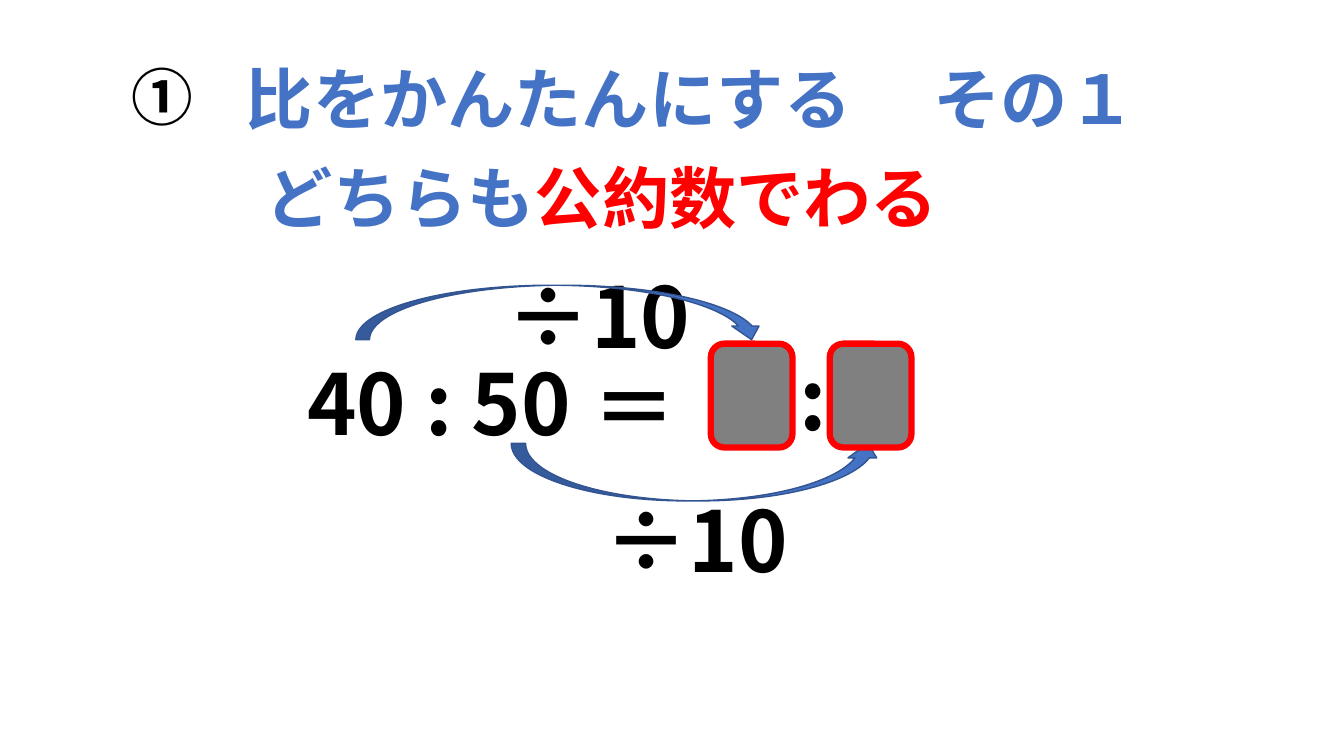
from lxml import etree
from pptx import Presentation
from pptx import util as u
from pptx.dml.color import RGBColor
from pptx.enum import shapes, text
from pptx.oxml.ns import qn

BLACK = RGBColor(0x00, 0x00, 0x00)
BLUE = RGBColor(0x44, 0x72, 0xC4)
DARK_BLUE = RGBColor(0x32, 0x54, 0x91)
RED = RGBColor(0xFF, 0x00, 0x00)
GRAY = RGBColor(0x80, 0x80, 0x80)


class RatioSlide:
    font_name = "Noto Sans CJK JP"

    def __init__(self, presentation):
        self.slide = presentation.slides.add_slide(presentation.slide_layouts[6])

    def label(self, left, top, width, height, size, *runs):
        """Add one line of bold text; runs are (words, colour) pairs."""
        shape = self.slide.shapes.add_textbox(
            u.Inches(left), u.Inches(top), u.Inches(width), u.Inches(height))
        frame = shape.text_frame
        frame.word_wrap = True
        frame.auto_size = text.MSO_AUTO_SIZE.SHAPE_TO_FIT_TEXT
        paragraph = frame.paragraphs[0]
        font = paragraph.font
        font.size, font.bold, font.name = u.Pt(size), True, self.font_name
        # East Asian characters need their own typeface entry
        latin = paragraph._p.pPr.find(".//" + qn("a:latin"))
        east_asian = etree.Element(qn("a:ea"), typeface=self.font_name)
        latin.addnext(east_asian)
        if len(runs) == 1:
            font.color.rgb = runs[0][1]
        for words, color in runs:
            run = paragraph.add_run()
            run.text = words
            if len(runs) > 1:
                run.font.color.rgb = color

    def figure(self, kind, left, top, width, height, fill, line, weight):
        shape = self.slide.shapes.add_shape(
            kind, u.Inches(left), u.Inches(top), u.Inches(width), u.Inches(height))
        shape.shadow.inherit = False
        shape.fill.solid()
        shape.fill.fore_color.rgb = fill
        shape.line.color.rgb = line
        shape.line.width = u.Pt(weight)
        return shape

    def curved_arrow(self, left, top, width, height, below=False):
        shape = self.figure(shapes.MSO_SHAPE.CURVED_DOWN_ARROW,
                            left, top, width, height, BLUE, DARK_BLUE, 1)
        if below:
            shape._element.spPr.xfrm.set("flipV", "1")

    def answer_box(self, left):
        self.figure(shapes.MSO_SHAPE.ROUNDED_RECTANGLE,
                    left, 3.41, 0.81, 1.03, GRAY, RED, 4.5)


def main():
    presentation = Presentation()
    presentation.slide_width = u.Inches(13.33)
    presentation.slide_height = u.Inches(7.5)
    ratio = RatioSlide(presentation)

    # Left side of the equation and the upper division
    ratio.label(2.95, 3.44, 3.06, 1.11, 60, ("40 : 50", BLACK))
    ratio.label(4.93, 2.57, 3.21, 1.11, 60, ("÷10", BLACK))
    ratio.curved_arrow(3.53, 2.83, 4.06, 0.54)

    # Lower division
    ratio.curved_arrow(5.07, 4.4, 3.68, 0.57, below=True)
    ratio.label(5.9, 4.8, 2.67, 1.11, 60, ("÷10", BLACK))

    # Heading
    ratio.label(2.34, 0.52, 9.51, 0.91, 48, ("比をかんたんにする　 その１", BLUE))
    ratio.label(1.21, 0.54, 1.03, 0.84, 44, ("①", BLACK))

    # Covered answers
    for left in (7.05, 8.23):
        ratio.answer_box(left)
    ratio.label(5.78, 3.48, 1, 1.11, 60, ("＝", BLACK))
    ratio.label(7.83, 3.39, 0.5, 1.11, 60, (":", BLACK))

    # Rule
    ratio.label(2.54, 1.5, 7.36, 0.91, 48, ("どちらも", BLUE), ("公約数でわる", RED))

    presentation.save("out.pptx")


if __name__ == "__main__":
    main()
